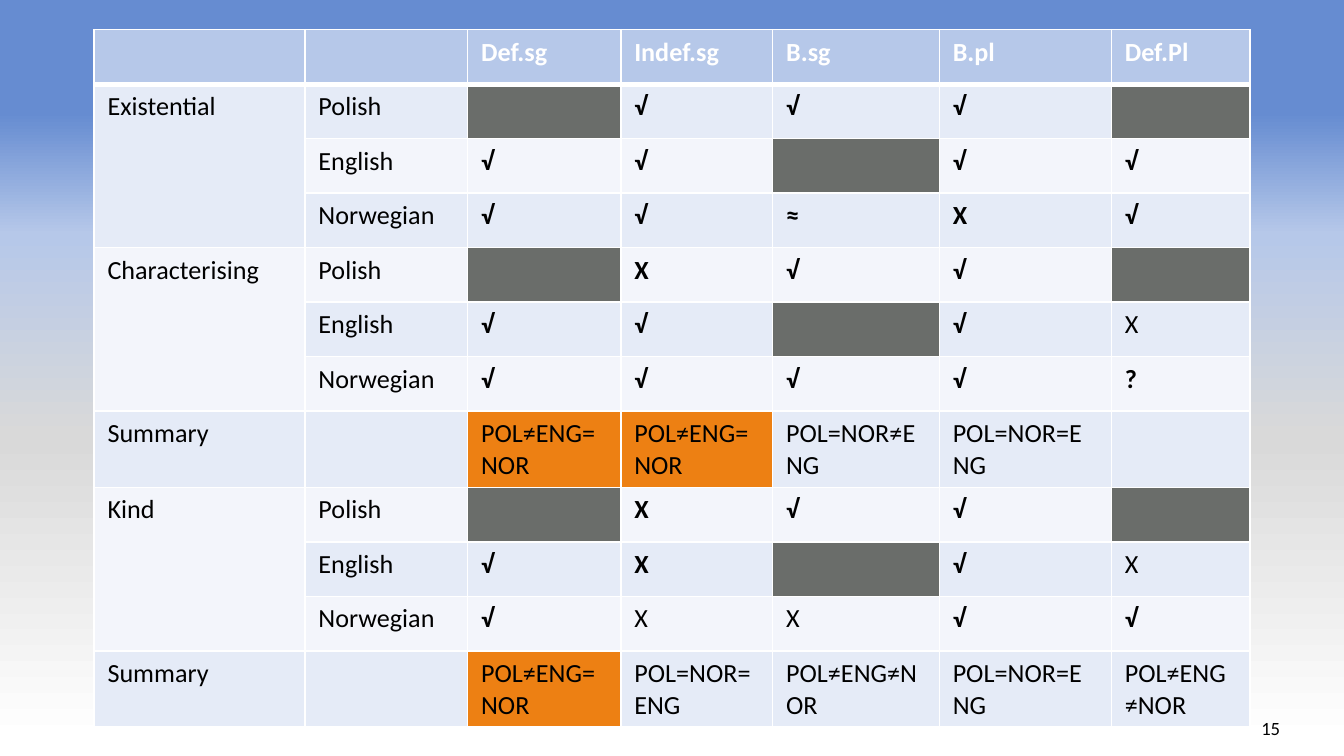
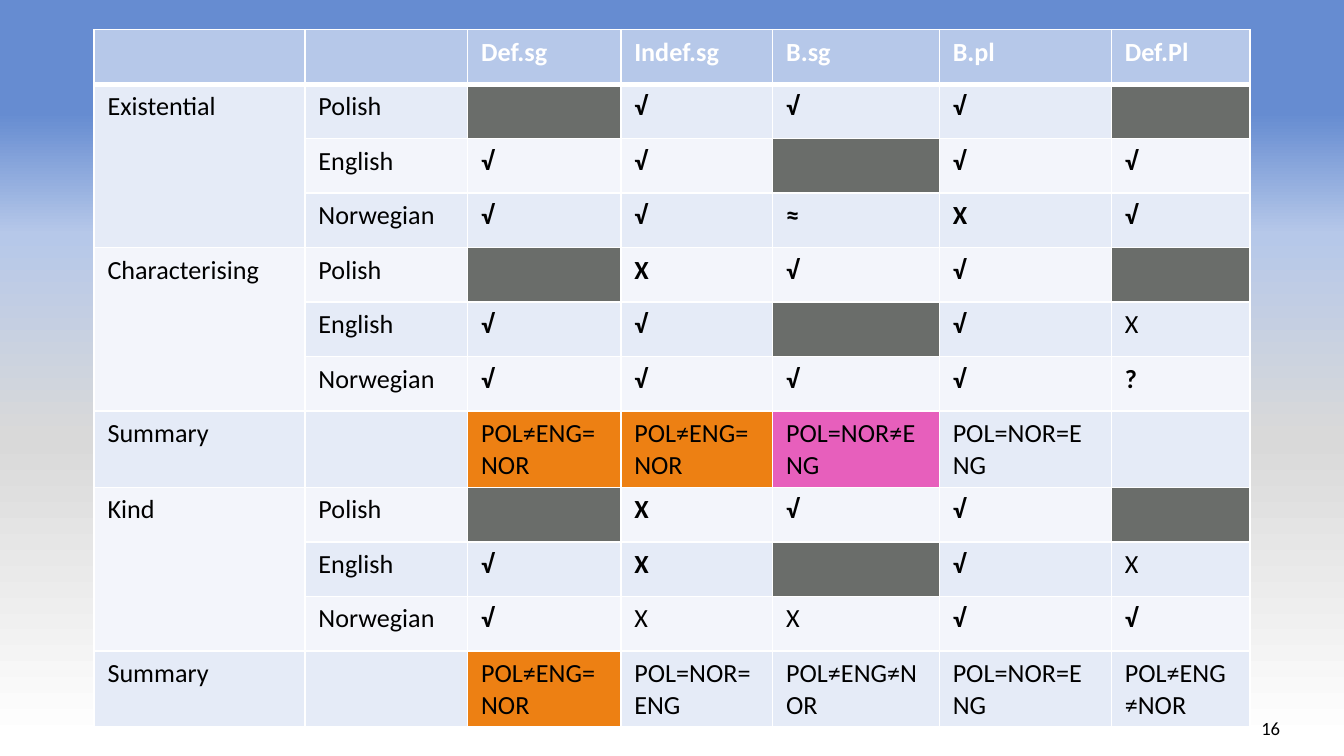
from dataclasses import dataclass

from lxml import etree
from pptx import Presentation
from pptx.dml.color import RGBColor
from pptx.enum.text import MSO_ANCHOR, PP_ALIGN
from pptx.oxml.ns import qn
from pptx.slide import Slide
from pptx.table import Table, _Cell
from pptx.text.text import _Paragraph
from pptx.util import Inches, Pt

CENTER = PP_ALIGN.CENTER
MIDDLE = MSO_ANCHOR.MIDDLE

WHITE = RGBColor(0xFF, 0xFF, 0xFF)
BLACK = RGBColor(0x00, 0x00, 0x00)
HEADER_BLUE = RGBColor(0xB6, 0xC8, 0xE9)
BAND_DARK = RGBColor(0xE5, 0xEB, 0xF7)
BAND_LIGHT = RGBColor(0xF3, 0xF5, 0xFB)
BLOCKED_GREY = RGBColor(0x6A, 0x6D, 0x6A)
ORANGE = RGBColor(0xED, 0x80, 0x13)
PINK = RGBColor(0xE7, 0x5F, 0xBC)
SKY_STOPS = (
    (2, WHITE),
    (42, RGBColor(0xD9, 0xD9, 0xD9)),
    (69, HEADER_BLUE),
    (85, RGBColor(0x66, 0x8C, 0xD1)),
)

FONT = "Calibri"
THIN, THICK = Pt(1), Pt(3)
SLIDE_WIDTH = Inches(10)
SLIDE_HEIGHT = SLIDE_WIDTH * 9 // 16
COLUMN_WIDTHS = (1.57, 1.21, 1.14, 1.13, 1.24, 1.28, 1.03)
HEADINGS = ("", "", "Def.sg", "Indef.sg", "B.sg", "B.pl", "Def.Pl")
LANGUAGES = ("Polish", "English", "Norwegian")
FIRST_MARK_COLUMN = 2
BLOCKED = "#"
PLAIN_X = "x"


@dataclass(frozen=True)
class Reading:
    name: str
    marks: tuple[str, ...]


@dataclass(frozen=True)
class Summary:
    verdicts: tuple[str, ...]


@dataclass(frozen=True)
class Comparison:
    number: int
    highlights: dict[tuple[int, int], RGBColor]


SECTIONS: tuple[Reading | Summary, ...] = (
    Reading("Existential", ("#√√√#", "√√#√√", "√√≈X√")),
    Reading("Characterising", ("#X√√#", "√√#√x", "√√√√?")),
    Summary(("POL≠ENG=NOR", "POL≠ENG=NOR", "POL=NOR≠ENG", "POL=NOR=ENG", "")),
    Reading("Kind", ("#X√√#", "√X#√x", "√xx√√")),
    Summary(("POL≠ENG=NOR", "POL=NOR=ENG", "POL≠ENG≠NOR", "POL=NOR=ENG", "POL≠ENG≠NOR")),
)
ROW_COUNT = 1 + sum(
    len(section.marks) if isinstance(section, Reading) else 1 for section in SECTIONS
)

ORANGE_VERDICTS = {(7, 2): ORANGE, (7, 3): ORANGE, (11, 2): ORANGE}
COMPARISONS = (
    Comparison(15, ORANGE_VERDICTS),
    Comparison(16, ORANGE_VERDICTS | {(7, 4): PINK}),
)


def add_text(
    paragraph: _Paragraph, text: str, size: int, color: RGBColor, bold: bool = False
) -> None:
    run = paragraph.add_run()
    run.text = text
    run.font.name = FONT
    run.font.size = Pt(size)
    run.font.bold = bold
    run.font.color.rgb = color


def paint_sky(slide: Slide) -> None:
    sky = slide.background.fill
    sky.gradient()
    sky.gradient_angle = 90
    stops = slide._element.find(".//" + qn("a:gsLst"))
    for default_stop in list(stops):
        stops.remove(default_stop)
    for percent, color in SKY_STOPS:
        stop = etree.SubElement(stops, qn("a:gs"), pos=str(percent * 1000))
        etree.SubElement(stop, qn("a:srgbClr"), val=str(color))


def add_slide_number(slide: Slide, number: int) -> None:
    frame = slide.shapes.add_textbox(
        Inches(9.27), Inches(5.27), Inches(0.37), Inches(0.3)
    ).text_frame
    frame.word_wrap = True
    frame.vertical_anchor = MIDDLE
    frame.margin_left = frame.margin_right = 0
    frame.paragraphs[0].alignment = CENTER
    add_text(frame.paragraphs[0], str(number), 10, BLACK)


def add_borders(cell: _Cell, row: int) -> None:
    properties = cell._tc.get_or_add_tcPr()
    widths = {
        "a:lnL": THIN,
        "a:lnR": THIN,
        "a:lnT": THICK if row == 1 else THIN,
        "a:lnB": THICK if row == 0 else THIN,
    }
    for side, width in widths.items():
        line = etree.SubElement(properties, qn(side), w=str(int(width)))
        solid = etree.SubElement(line, qn("a:solidFill"))
        etree.SubElement(solid, qn("a:srgbClr"), val=str(WHITE))


def fill_cell(cell: _Cell, color: RGBColor) -> None:
    cell.fill.solid()
    cell.fill.fore_color.rgb = color


def style_grid(table: Table, highlights: dict[tuple[int, int], RGBColor]) -> None:
    for row in range(ROW_COUNT):
        band = BAND_DARK if row % 2 else BAND_LIGHT
        for column in range(len(HEADINGS)):
            cell = table.cell(row, column)
            add_borders(cell, row)
            base = HEADER_BLUE if row == 0 else band
            fill_cell(cell, highlights.get((row, column), base))


def write_cell(
    cell: _Cell, text: str, color: RGBColor = BLACK, bold: bool = False
) -> None:
    if text:
        add_text(cell.text_frame.paragraphs[0], text, 14, color, bold)


def write_reading(table: Table, top: int, reading: Reading) -> None:
    table.cell(top, 0).merge(table.cell(top + len(LANGUAGES) - 1, 0))
    write_cell(table.cell(top, 0), reading.name)
    for row, (language, marks) in enumerate(zip(LANGUAGES, reading.marks), top):
        write_cell(table.cell(row, 1), language)
        for column, mark in enumerate(marks, FIRST_MARK_COLUMN):
            cell = table.cell(row, column)
            if mark == BLOCKED:
                fill_cell(cell, BLOCKED_GREY)
            else:
                write_cell(cell, mark.upper(), bold=mark != PLAIN_X)


def write_summary(table: Table, row: int, summary: Summary) -> None:
    write_cell(table.cell(row, 0), "Summary")
    for column, verdict in enumerate(summary.verdicts, FIRST_MARK_COLUMN):
        write_cell(table.cell(row, column), verdict)


def add_comparison_table(
    slide: Slide, highlights: dict[tuple[int, int], RGBColor]
) -> None:
    table = slide.shapes.add_table(
        ROW_COUNT, len(HEADINGS), Inches(0.7), Inches(0.22), Inches(8.6), Inches(4.87)
    ).table
    table.horz_banding = False
    for column, width in zip(table.columns, COLUMN_WIDTHS):
        column.width = Inches(width)
    style_grid(table, highlights)
    for column, heading in enumerate(HEADINGS):
        write_cell(table.cell(0, column), heading, WHITE, True)
    row = 1
    for section in SECTIONS:
        if isinstance(section, Reading):
            write_reading(table, row, section)
            row += len(section.marks)
        else:
            write_summary(table, row, section)
            row += 1


def main() -> None:
    prs = Presentation()
    prs.slide_width = SLIDE_WIDTH
    prs.slide_height = SLIDE_HEIGHT
    blank = prs.slide_layouts[6]
    for comparison in COMPARISONS:
        slide = prs.slides.add_slide(blank)
        paint_sky(slide)
        add_slide_number(slide, comparison.number)
        add_comparison_table(slide, comparison.highlights)
    prs.save("out.pptx")


if __name__ == "__main__":
    main()
